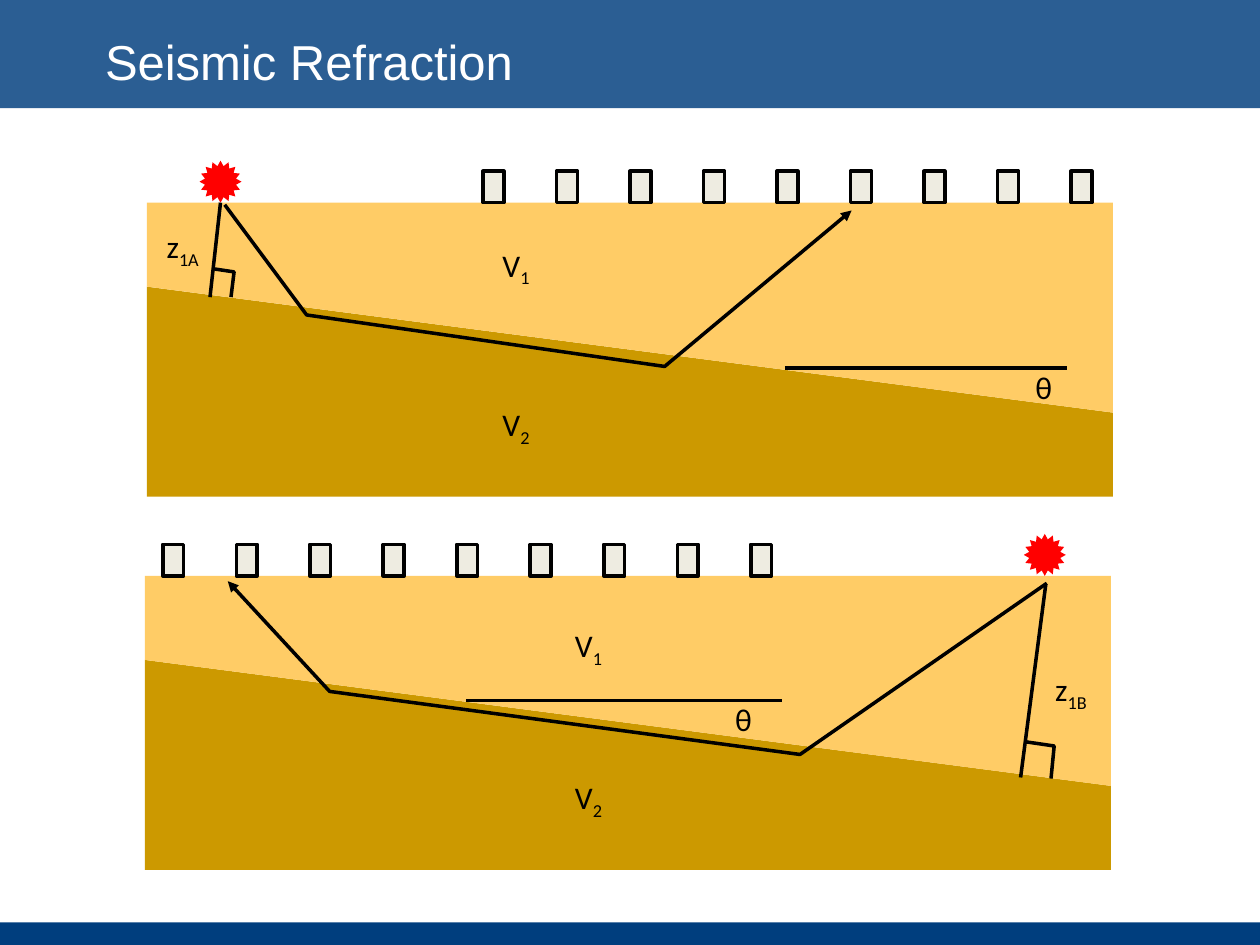
"""Builds a slide on seismic refraction above a dipping interface."""
from dataclasses import dataclass

from lxml import etree
from pptx import Presentation
from pptx import util as u
from pptx.dml.color import RGBColor
from pptx.enum import shapes as kinds, text
from pptx.oxml.ns import qn

COLUMNS, ROWS = 120, 90
CELL = u.Inches(10) // COLUMNS


@dataclass(frozen=True)
class Theme:
    """Colours, fonts and sizes of the slide."""
    band: str = "003E7E"
    title: str = "FFFFFF"
    upper: str = "FFCC66"
    lower: str = "CC9900"
    shot: str = "FF0000"
    geophone: str = "EEECE1"
    ink: str = "000000"
    title_font: str = "Arial"
    label_font: str = "Calibri"
    title_size: u.Pt = u.Pt(28)
    label_size: u.Pt = u.Pt(18)
    stroke: u.Pt = u.Pt(2)


THEME = Theme()


@dataclass(frozen=True)
class Box:
    """An area of the slide, measured in grid cells."""
    left: float
    top: float
    width: float
    height: float

    def point(self, x, y):
        """Return the slide position of a point given relative to the box."""
        return round((self.left + x) * CELL), round((self.top + y) * CELL)

    def frame(self, x, y, width, height):
        """Return the slide position and size of an area inside the box."""
        return *self.point(x, y), round(width * CELL), round(height * CELL)


@dataclass(frozen=True)
class Survey:
    """Positions, in cells from the panel's corner, of one shot's parts."""
    shot: float
    first_geophone: float
    velocities: tuple
    depth_name: str
    depth_label: tuple
    normal: tuple
    right_angle: tuple
    ray: tuple
    horizontal: tuple
    dip_label: tuple


def paint(shape, fill=None, outline=None):
    """Set a shape's fill and outline and remove its shadow."""
    shape.shadow.inherit = False
    if fill:
        shape.fill.solid()
        shape.fill.fore_color.rgb = RGBColor.from_string(fill)
    else:
        shape.fill.background()
    if outline:
        draw_stroke(shape)
    else:
        shape.line.fill.background()


def draw_stroke(shape):
    """Give a shape or connector the common line."""
    shape.line.color.rgb = RGBColor.from_string(THEME.ink)
    shape.line.width = THEME.stroke


def add_preset(slide, box, preset, area, fill, outline=None):
    """Add a painted preset shape inside a box."""
    shape = slide.shapes.add_shape(preset, *box.frame(*area))
    paint(shape, fill, outline)
    return shape


def add_outline(slide, box, points, fill=None):
    """Add a filled polygon, or an open line if there is no fill."""
    first, *others = [box.point(*point) for point in points]
    builder = slide.shapes.build_freeform(*first)
    builder.add_line_segments(others, close=bool(fill))
    shape = builder.convert_to_shape()
    paint(shape, fill, None if fill else THEME.ink)
    return shape


def add_line(slide, box, start, end):
    """Add a straight line between two points of a box."""
    line = slide.shapes.add_connector(
        kinds.MSO_CONNECTOR.STRAIGHT, *box.point(*start), *box.point(*end))
    draw_stroke(line)
    etree.SubElement(line.element.spPr, qn("a:effectLst"))


def add_label(slide, box, corner, width, symbol, index=""):
    """Add a symbol with an optional subscript."""
    frame = slide.shapes.add_textbox(*box.frame(*corner, width, 4.8)).text_frame
    frame.word_wrap = False
    paragraph = frame.paragraphs[0]
    paragraph.alignment = text.PP_ALIGN.CENTER
    paragraph.font.name = THEME.label_font
    paragraph.font.size = THEME.label_size
    paragraph.font.color.rgb = RGBColor.from_string(THEME.ink)
    paragraph.add_run().text = symbol
    if index:
        subscript = paragraph.add_run()
        subscript.text = index
        subscript.font._element.set("baseline", "-25000")


def add_header(slide, box):
    """Place the translucent header band and the title on it."""
    band = add_preset(slide, box, kinds.MSO_SHAPE.RECTANGLE,
                      (0, 0, box.width, box.height), THEME.band)
    colour = band.element.spPr.find(qn("a:solidFill"))[0]
    etree.SubElement(colour, qn("a:alpha"), val="83000")
    title = slide.shapes.title
    title.left, title.top, title.width, title.height = box.frame(8.8, 2.3, 81.2, 7)
    title.element.getparent().append(title.element)
    title.text_frame.text = "Seismic Refraction"
    title.text_frame.vertical_anchor = text.MSO_ANCHOR.MIDDLE
    paragraph = title.text_frame.paragraphs[0]
    paragraph.alignment = text.PP_ALIGN.LEFT
    paragraph.font.name = THEME.title_font
    paragraph.font.size = THEME.title_size
    paragraph.font.color.rgb = RGBColor.from_string(THEME.title)


def add_footer(slide, box):
    """Place the footer band."""
    add_preset(slide, box, kinds.MSO_SHAPE.RECTANGLE,
               (0, 0, box.width, box.height), THEME.band)


def add_survey(slide, box, survey):
    """Place the two layers, the shot, the geophones and the ray path."""
    interface = [(0, 8), (box.width, 20)]
    add_outline(slide, box, [*interface, (box.width, box.height), (0, box.height)],
                THEME.lower)
    add_outline(slide, box, [(0, 0), (box.width, 0), *reversed(interface)],
                THEME.upper)
    add_preset(slide, box, kinds.MSO_SHAPE.STAR_16_POINT,
               (survey.shot, -4, 4, 4), THEME.shot)
    for number in range(9):
        add_preset(slide, box, kinds.MSO_SHAPE.RECTANGLE,
                   (survey.first_geophone + 7 * number, -3, 2, 3),
                   THEME.geophone, THEME.ink)
    for layer, corner in enumerate(survey.velocities, 1):
        add_label(slide, box, corner, 5.5, "V", str(layer))
    add_label(slide, box, survey.depth_label, 6.4, "z", survey.depth_name)
    add_line(slide, box, *survey.normal)
    add_outline(slide, box, survey.right_angle)
    ray = add_outline(slide, box, survey.ray)
    etree.SubElement(ray.element.spPr.find(qn("a:ln")), qn("a:tailEnd"), type="triangle")
    add_line(slide, box, *survey.horizontal)
    add_label(slide, box, survey.dip_label, 4, "θ")


DOWN_DIP = Survey(
    shot=5, first_geophone=32, velocities=((32.4, 3.5), (32.4, 18.7)),
    depth_name="1A", depth_label=(0.2, 1.7), normal=((7, 0), (6, 9)),
    right_angle=((6.3, 6.3), (8.3, 6.6), (8, 9)),
    ray=((7.4, 0.2), (15.2, 10.7), (49.3, 15.6), (67.1, 0.75)),
    horizontal=((60.75, 15.75), (87.65, 15.75)), dip_label=(83.4, 15.2))

UP_DIP = Survey(
    shot=83.7, first_geophone=1.7, velocities=((39.5, 4.2), (39.5, 18.7)),
    depth_name="1B", depth_label=(85, 8.4), normal=((85.8, 0.8), (83.4, 19.2)),
    right_angle=((83.9, 15.8), (86.6, 16.2), (86.3, 19.3)),
    ray=((85.9, 0.7), (62.4, 17), (17.6, 11), (7.9, 0.5)),
    horizontal=((30.6, 11.85), (60.7, 11.85)), dip_label=(55, 11.2))


def main():
    """Build and save the slide."""
    deck = Presentation()
    deck.slide_width, deck.slide_height = COLUMNS * CELL, ROWS * CELL
    slide = deck.slides.add_slide(deck.slide_layouts[5])
    add_footer(slide, Box(0, 87.84, COLUMNS, 2.16))
    add_header(slide, Box(0, 0, COLUMNS, 10.3))
    add_survey(slide, Box(14, 19.3, 92, 28), DOWN_DIP)
    add_survey(slide, Box(13.8, 54.85, 92, 28), UP_DIP)
    deck.save("out.pptx")


if __name__ == "__main__":
    main()
